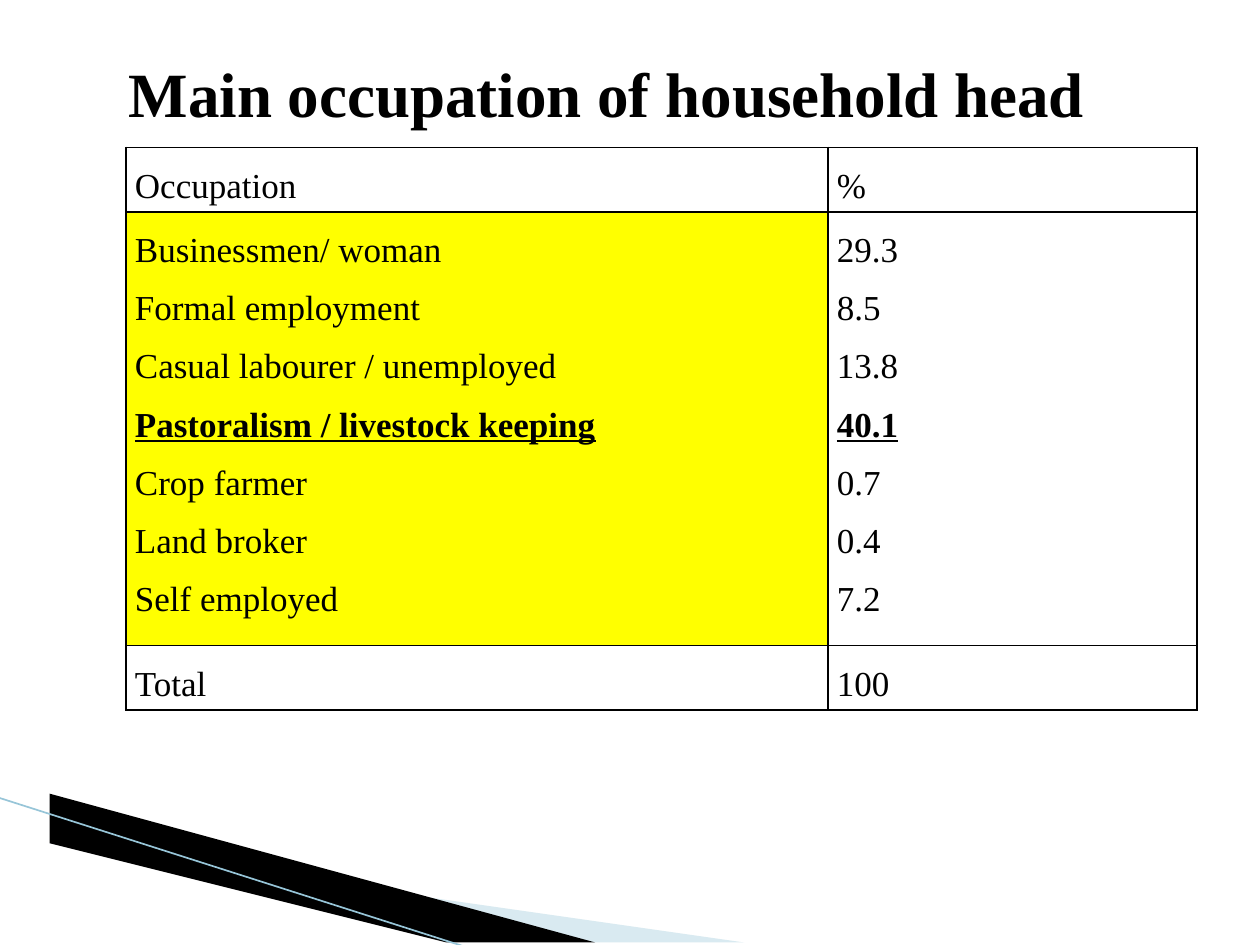
from lxml.etree import SubElement
from pptx import Presentation
from pptx.dml.color import RGBColor
from pptx.enum.text import MSO_ANCHOR as Anchor, PP_ALIGN as Align
from pptx.oxml.ns import qn
from pptx.util import Cm, Pt

COLORS = {"ink": "000000", "highlight": "FFFF00", "wedge": "A0CBDC", "edge": "97C5D8"}
FONT = "Times New Roman"
MAIN = "Pastoralism / livestock keeping"
OCCUPATIONS = [
    ("Businessmen/ woman", "29.3"),
    ("Formal employment", "8.5"),
    ("Casual labourer / unemployed", "13.8"),
    (MAIN, "40.1"),
    ("Crop farmer", "0.7"),
    ("Land broker", "0.4"),
    ("Self employed", "7.2"),
]
ROWS = [[("Occupation", "%")], OCCUPATIONS, [("Total", "100")]]


def color(name):
    return RGBColor.from_string(COLORS[name])


def style(font, size, bold=False, underline=False):
    font.name, font.size = FONT, Pt(size)
    font.bold, font.underline = bold, underline
    font.color.rgb = color("ink")


def add_wedge(slide, left, top, points, fill, opacity=100):
    corners = [(left + x, top + y) for x, y in points]
    builder = slide.shapes.build_freeform(*corners[0], scale=Cm(1))
    builder.add_line_segments(corners[1:], close=True)
    wedge = builder.convert_to_shape()
    wedge.shadow.inherit = False
    wedge.fill.solid()
    wedge.fill.fore_color.rgb = color(fill)
    wedge.line.fill.background()
    if opacity < 100:
        tint = wedge.fill._xPr.find(qn("a:solidFill"))[0]
        SubElement(tint, qn("a:alpha"), val=str(opacity * 1000))


def add_corner(slide, left, top):
    add_wedge(slide, left, top,
              [(1.4, 0.46), (15.11, 3), (11.58, 3), (1.4, 0.43)], "wedge", 40)
    add_wedge(slide, left, top,
              [(1.35, 0.4), (11.61, 3), (9.45, 3.02), (1.37, 0.43)], "ink")
    edge = slide.shapes.add_connector(
        1, Cm(left - 0.03), Cm(top), Cm(left + 9.42), Cm(top + 3.02))
    edge.line.color.rgb = color("edge")
    edge.line.width = Pt(0.95)
    SubElement(edge._element.spPr, qn("a:effectLst"))


def add_heading(slide, left, top, width, height):
    heading = slide.shapes.title
    heading.left, heading.top = Cm(left), Cm(top)
    heading.width, heading.height = Cm(width), Cm(height)
    frame = heading.text_frame
    frame.text = "Main occupation of household head"
    frame.vertical_anchor = Anchor.TOP
    frame.paragraphs[0].alignment = Align.LEFT
    style(frame.paragraphs[0].runs[0].font, 36, bold=True)


def add_borders(cell):
    properties = cell._tc.get_or_add_tcPr()
    for position, side in enumerate(("a:lnL", "a:lnR", "a:lnT", "a:lnB")):
        border = SubElement(properties, qn(side), w=str(Pt(1)))
        properties.insert(position, border)
        SubElement(SubElement(border, qn("a:solidFill")), qn("a:srgbClr"), val=COLORS["ink"])


def fill_cell(cell, entries, main_line, highlighted):
    cell.margin_left = cell.margin_right = Cm(0.18)
    cell.margin_top = cell.margin_bottom = 0
    cell.vertical_anchor = Anchor.TOP
    if highlighted:
        cell.fill.solid()
        cell.fill.fore_color.rgb = color("highlight")
    else:
        cell.fill.background()
    add_borders(cell)
    cell.text_frame.text = "\n".join(entries)
    for index, entry in enumerate(cell.text_frame.paragraphs):
        entry.alignment = Align.JUSTIFY
        entry.line_spacing = 1.5
        emphasis = index == main_line
        style(entry.runs[0].font, 20, emphasis, emphasis)


def add_occupations(slide, left, top, widths, heights):
    occupations = slide.shapes.add_table(
        len(heights), len(widths), Cm(left), Cm(top),
        Cm(sum(widths)), Cm(sum(heights))).table
    occupations.first_row = occupations.horz_banding = False
    for column, width in zip(occupations.columns, widths):
        column.width = Cm(width)
    for r, (group, height) in enumerate(zip(ROWS, heights)):
        occupations.rows[r].height = Cm(height)
        names = [name for name, _ in group]
        main_line = names.index(MAIN) if MAIN in names else None
        for c, entries in enumerate(zip(*group)):
            fill_cell(occupations.cell(r, c), entries, main_line,
                      group is OCCUPATIONS and c == 0)


def main():
    deck = Presentation()
    deck.slide_width, deck.slide_height = Cm(25.4), Cm(19.05)
    slide = deck.slides.add_slide(deck.slide_layouts[5])
    add_corner(slide, 0, 16.08)
    add_occupations(slide, 2.54, 2.97, [14.15, 7.44], [1.3, 8.74, 1.3])
    add_heading(slide, 2.34, 0.98, 20.32, 1.8)
    deck.save("out.pptx")


if __name__ == "__main__":
    main()
